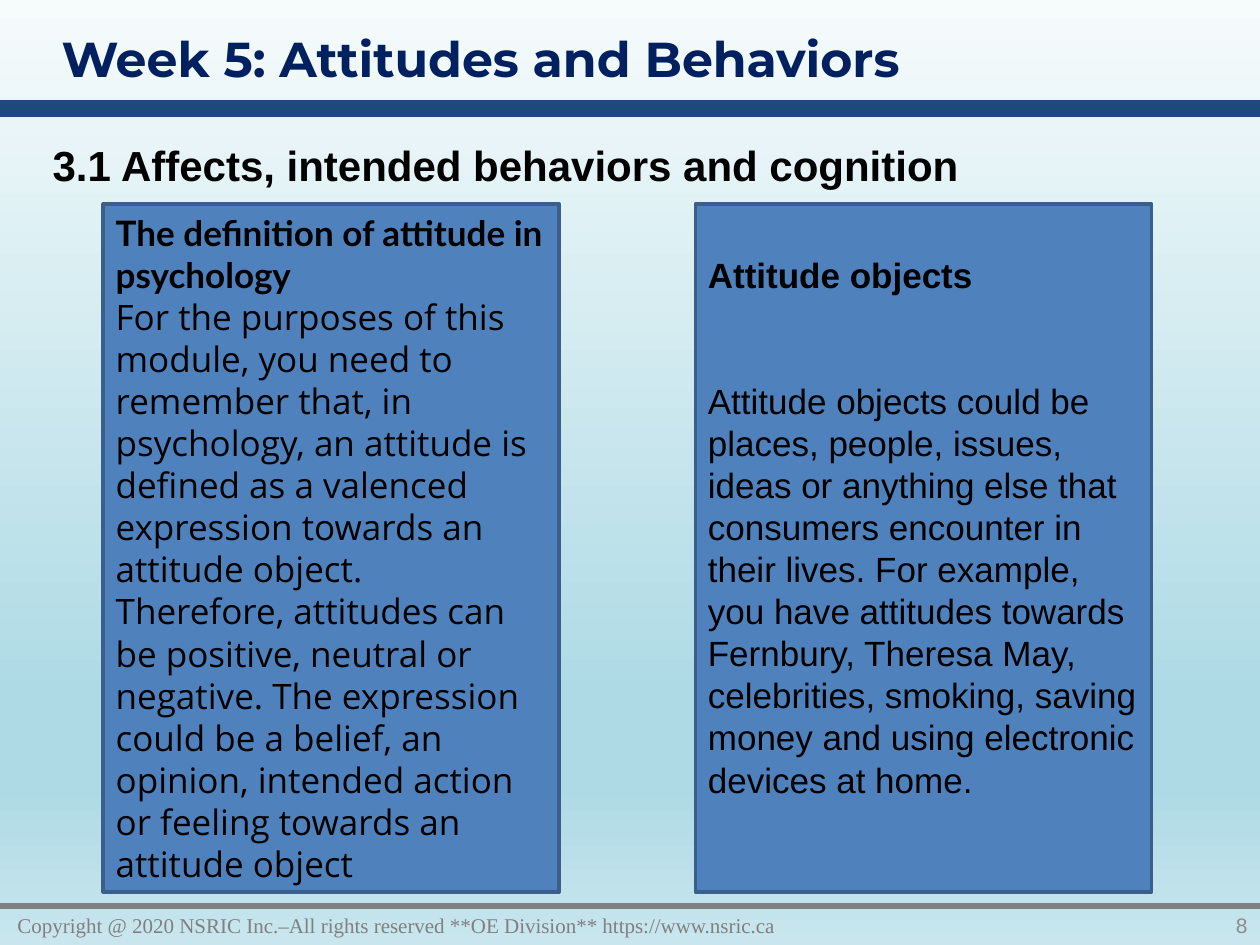
"""Builds the slide on attitudes and behaviors with its two text panels."""
from lxml import etree
from pptx import Presentation
from pptx import util as u
from pptx.dml.color import RGBColor
from pptx.enum import shapes, text
from pptx.oxml.ns import qn

COLORS = {
    "navy": "002060", "bar": "1F497D", "rule": "808080", "number": "8C8C8C",
    "panel": "4F81BD", "border": "3A5F8C", "black": "000000",
}
BACKGROUND = [(0, "F6FBFC"), (74, "AEDAE5"), (83, "AEDAE5"), (100, "C9E6EE")]
WIDTH, HEIGHT = 720, 540
RULES = [(62, "bar", 10), (517.7, "rule", 3)]
LABELS = [
    ("Copyright @ 2020 NSRIC Inc.–All rights reserved **OE Division** https://www.nsric.ca",
     (2.9, 517.7, 595.4, 22.3), ("Times New Roman", 12, "rule", False), "MIDDLE", "LEFT"),
    ("8", (618.5, 517.7, 101.5, 22.3), ("Arial", 12, "number", False), "MIDDLE", "RIGHT"),
    ("Week 5: Attitudes and Behaviors",
     (28.1, 13, 630.7, 41), ("Montserrat", 28, "navy", True), "TOP", "LEFT"),
    ("3.1 Affects, intended behaviors and cognition",
     (23, 76.3, 652.3, 58.3), ("Arial", 24, "black", True), "TOP", "LEFT"),
]
LINE = 24
PANELS = [
    {"bottom": 3.6, "paragraphs": [
        ("The definition of attitude in psychology", "Lato", True, 0),
        ("For the purposes of this module, you need to remember that, in psychology, "
         "an attitude is defined as a valenced expression towards an attitude object.",
         "Open Sans", False, 0),
        ("Therefore, attitudes can be positive, neutral or negative. The expression could be "
         "a belief, an opinion, intended action or feeling towards an attitude object",
         "Open Sans", False, 0)]},
    {"bottom": 3.6 + LINE, "paragraphs": [
        ("Attitude objects", "Arial", True, 0),
        ("Attitude objects could be places, people, issues, ideas or anything else that "
         "consumers encounter in their lives. For example, you have attitudes towards "
         "Fernbury, Theresa May, celebrities, smoking, saving money and using electronic "
         "devices at home.", "Arial", False, 2 * LINE)]},
]
PANEL_LEFT, PANEL_TOP, PANEL_STEP = 59, 116.6, 338.4
PANEL_WIDTH, PANEL_HEIGHT = 260.6, 393.1


def color(name):
    return RGBColor.from_string(COLORS[name])


def points(values):
    return [u.Pt(value) for value in values]


def set_font(para, name, size, tone, bold):
    font = para.font
    font.name, font.size, font.bold = name, u.Pt(size), bold
    font.color.rgb = color(tone)


def paint_background(page):
    fill = page.background.fill
    fill.gradient()
    fill.gradient_angle = 270
    stops = page.background._cSld.find(".//" + qn("a:gsLst"))
    for stop in list(stops):
        stops.remove(stop)
    for percent, tone in BACKGROUND:
        stop = etree.SubElement(stops, qn("a:gs"), pos=str(percent * 1000))
        etree.SubElement(stop, qn("a:srgbClr"), val=tone)


def add_rule(page, y, tone, weight):
    rule = page.shapes.add_connector(
        shapes.MSO_CONNECTOR.STRAIGHT, *points((0, y, WIDTH, y)))
    rule.line.color.rgb = color(tone)
    rule.line.width = u.Pt(weight)
    etree.SubElement(rule._element.spPr, qn("a:effectLst"))


def add_label(page, words, place, style, anchor, align):
    frame = page.shapes.add_textbox(*points(place)).text_frame
    frame.word_wrap = True
    frame.vertical_anchor = text.MSO_ANCHOR[anchor]
    para = frame.paragraphs[0]
    para.text = words
    para.alignment = text.PP_ALIGN[align]
    set_font(para, *style)


def add_panel(page, column, panel):
    place = (PANEL_LEFT + column * PANEL_STEP, PANEL_TOP, PANEL_WIDTH, PANEL_HEIGHT)
    box = page.shapes.add_shape(shapes.MSO_SHAPE.RECTANGLE, *points(place))
    box.shadow.inherit = False
    box.fill.solid()
    box.fill.fore_color.rgb = color("panel")
    box.line.color.rgb = color("border")
    box.line.width = u.Pt(2)
    frame = box.text_frame
    frame.word_wrap = True
    frame.vertical_anchor = text.MSO_ANCHOR.MIDDLE
    frame.margin_bottom = u.Pt(panel["bottom"])
    for index, (words, font, bold, before) in enumerate(panel["paragraphs"]):
        para = frame.add_paragraph() if index else frame.paragraphs[0]
        para.text = words
        para.alignment = text.PP_ALIGN.LEFT
        para.line_spacing = u.Pt(LINE)
        para.space_before = u.Pt(before)
        set_font(para, font, 20, "black", bold)


def main():
    deck = Presentation()
    deck.slide_width, deck.slide_height = points((WIDTH, HEIGHT))
    page = deck.slides.add_slide(deck.slide_layouts[6])
    paint_background(page)
    for rule in RULES:
        add_rule(page, *rule)
    for label in LABELS:
        add_label(page, *label)
    for column, panel in enumerate(PANELS):
        add_panel(page, column, panel)
    deck.save("out.pptx")


if __name__ == "__main__":
    main()
